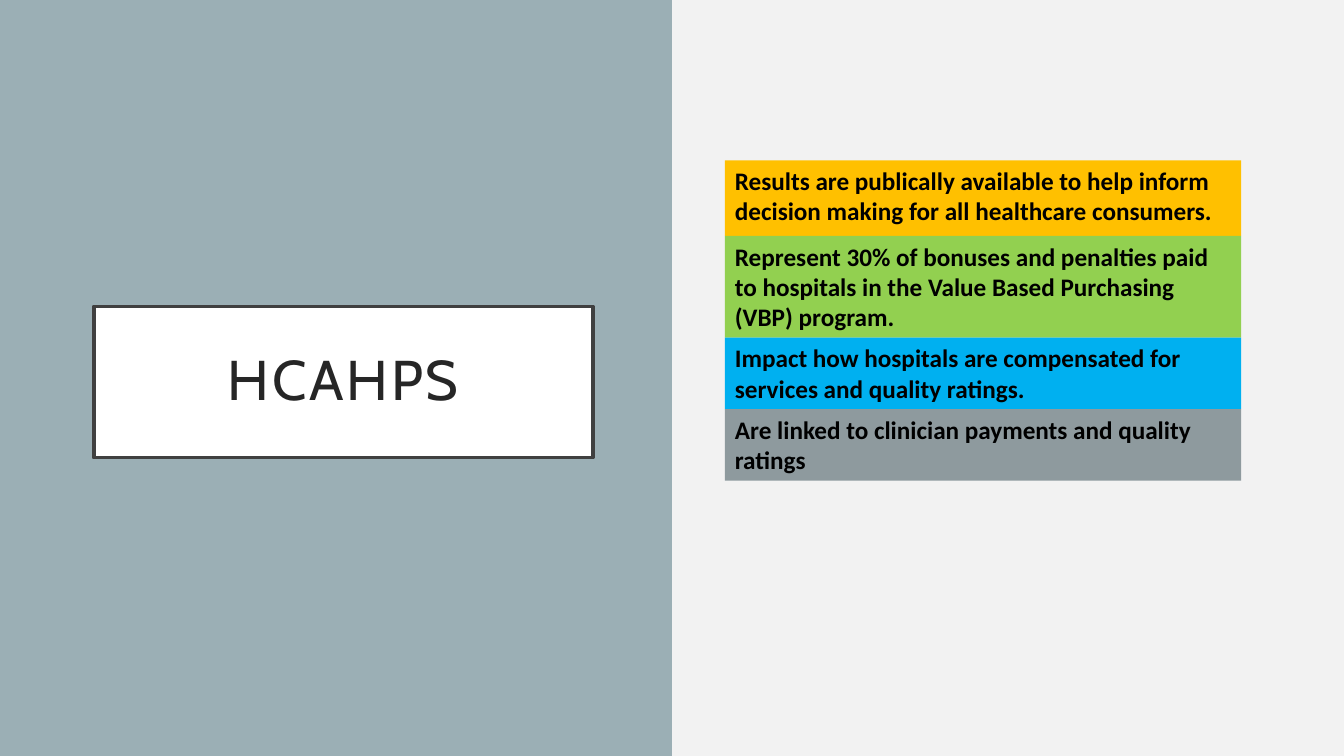
from dataclasses import dataclass

from pptx import Presentation
from pptx.dml.color import RGBColor
from pptx.enum.shapes import MSO_SHAPE
from pptx.enum.text import MSO_ANCHOR, MSO_AUTO_SIZE, PP_ALIGN
from pptx.shapes.autoshape import Shape
from pptx.slide import Slide
from pptx.text.text import _Run
from pptx.util import Inches, Pt

BACKGROUND = RGBColor(0xF2, 0xF2, 0xF2)
SLATE = RGBColor(0x9B, 0xAF, 0xB5)
WHITE = RGBColor(0xFF, 0xFF, 0xFF)
BLACK = RGBColor(0x00, 0x00, 0x00)
BORDER = RGBColor(0x40, 0x40, 0x40)
TITLE_INK = RGBColor(0x26, 0x26, 0x26)
AMBER = RGBColor(0xFF, 0xC0, 0x00)
GREEN = RGBColor(0x92, 0xD0, 0x50)
BLUE = RGBColor(0x00, 0xB0, 0xF0)
GRAY = RGBColor(0x8E, 0x9A, 0x9E)

SLIDE_WIDTH, SLIDE_HEIGHT = 13.33, 7.5
FACTS_LEFT, FACTS_TOP, FACTS_WIDTH = 7.19, 1.59, 5.12


@dataclass(frozen=True)
class Fact:
    text: str
    height: float
    color: RGBColor


FACTS = [
    Fact("Results are publically available to help inform decision making "
         "for all healthcare consumers.", 0.75, AMBER),
    Fact("Represent 30% of bonuses and penalties paid to hospitals in the "
         "Value Based Purchasing (VBP) program.", 1.01, GREEN),
    Fact("Impact how hospitals are compensated for services and quality "
         "ratings.", 0.71, BLUE),
    Fact("Are linked to clinician payments and quality ratings", 0.71, GRAY),
]


def add_block(slide: Slide, left: float, top: float, width: float,
              height: float, color: RGBColor) -> Shape:
    block = slide.shapes.add_shape(
        MSO_SHAPE.RECTANGLE, Inches(left), Inches(top),
        Inches(width), Inches(height))
    block.shadow.inherit = False
    block.fill.solid()
    block.fill.fore_color.rgb = color
    block.line.fill.background()
    return block


def style_run(run: _Run, font_name: str, size: float, color: RGBColor,
              bold: bool) -> None:
    run.font.name = font_name
    run.font.size = Pt(size)
    run.font.color.rgb = color
    run.font.bold = bold


def add_fact(slide: Slide, fact: Fact, top: float) -> None:
    band = add_block(slide, FACTS_LEFT, top, FACTS_WIDTH, fact.height,
                     fact.color)
    frame = band.text_frame
    frame.word_wrap = True
    frame.vertical_anchor = MSO_ANCHOR.TOP
    paragraph = frame.paragraphs[0]
    paragraph.alignment = PP_ALIGN.LEFT
    run = paragraph.add_run()
    run.text = fact.text
    style_run(run, "Calibri", 18, BLACK, True)


def format_title(title: Shape) -> None:
    title.left, title.top = Inches(0.93), Inches(3.04)
    title.width, title.height = Inches(4.95), Inches(1.5)
    title.fill.solid()
    title.fill.fore_color.rgb = WHITE
    title.line.color.rgb = BORDER
    title.line.width = Pt(2.5)
    frame = title.text_frame
    frame.word_wrap = True
    frame.auto_size = MSO_AUTO_SIZE.NONE
    frame.vertical_anchor = MSO_ANCHOR.MIDDLE
    frame.margin_left = frame.margin_right = Inches(0.2)
    frame.margin_top = frame.margin_bottom = Inches(0.2)
    paragraph = frame.paragraphs[0]
    paragraph.alignment = PP_ALIGN.CENTER
    paragraph.line_spacing = 0.9
    run = paragraph.add_run()
    run.text = "HCAHPS"
    style_run(run, "Cabin", 40, TITLE_INK, False)
    run._r.get_or_add_rPr().set("spc", "200")


def main() -> None:
    presentation = Presentation()
    presentation.slide_width = Inches(SLIDE_WIDTH)
    presentation.slide_height = Inches(SLIDE_HEIGHT)
    slide = presentation.slides.add_slide(presentation.slide_layouts[5])
    slide.background.fill.solid()
    slide.background.fill.fore_color.rgb = BACKGROUND

    title = slide.shapes.title
    left_panel = add_block(slide, 0, 0, SLIDE_WIDTH / 2, SLIDE_HEIGHT, SLATE)
    title.element.addprevious(left_panel.element)
    format_title(title)

    top = FACTS_TOP
    for fact in FACTS:
        add_fact(slide, fact, top)
        top += fact.height

    presentation.save("out.pptx")


if __name__ == "__main__":
    main()
